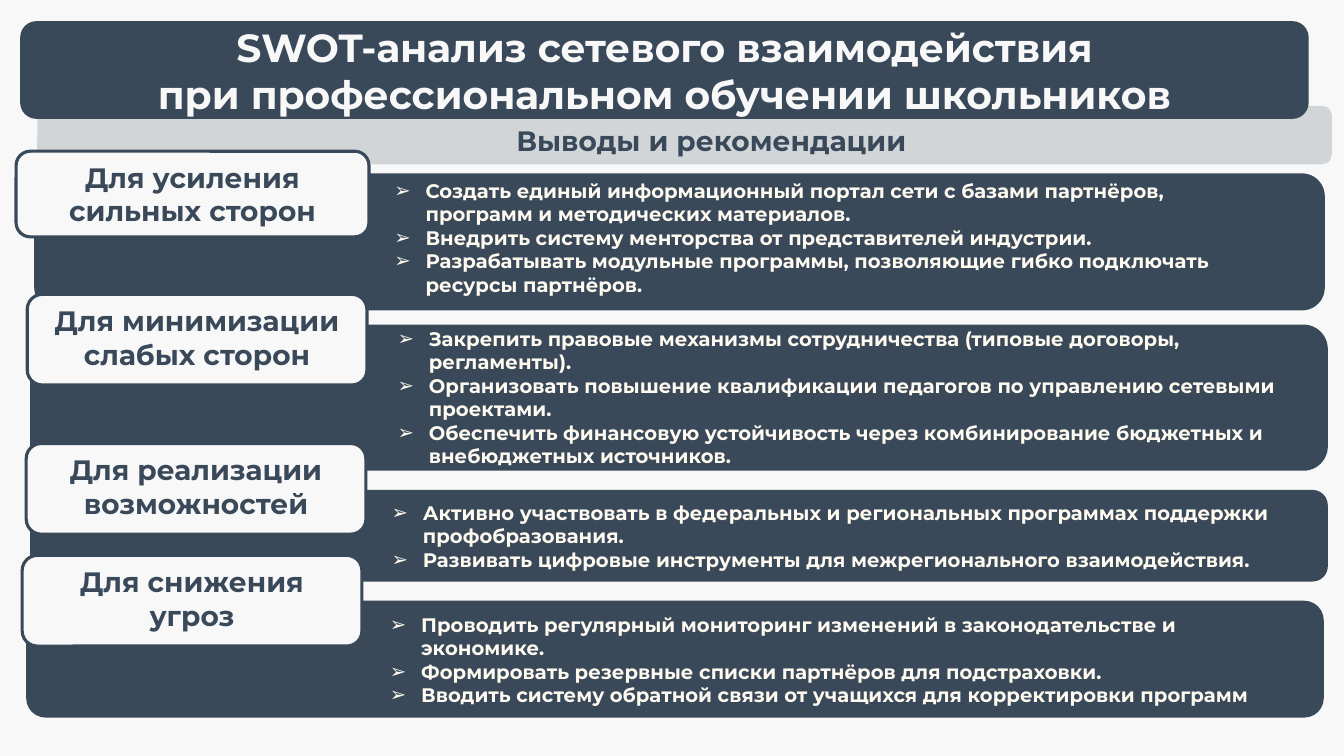
from dataclasses import dataclass

from lxml import etree
from pptx import Presentation
from pptx.dml.color import RGBColor
from pptx.enum.shapes import MSO_SHAPE
from pptx.enum.text import MSO_ANCHOR, MSO_AUTO_SIZE, PP_ALIGN
from pptx.oxml.ns import qn
from pptx.util import Inches, Pt

ROUNDED = MSO_SHAPE.ROUNDED_RECTANGLE
TOP, MIDDLE = MSO_ANCHOR.TOP, MSO_ANCHOR.MIDDLE
LEFT, CENTER = PP_ALIGN.LEFT, PP_ALIGN.CENTER
NO_AUTOFIT = MSO_AUTO_SIZE.NONE

FONT = "Montserrat"
NAVY, PAPER, CREAM = "394959", "F8F8F8", "FFFAF0"
COMPARISON_LAYOUT = 4  # a title and four body placeholders
BULLET_INDENT = 0.31
CORNER_INSET = 0.05  # share of the height kept clear of rounded corners


@dataclass(frozen=True)
class Box:
    left: float
    top: float
    width: float
    height: float

    def lengths(self) -> tuple:
        return tuple(Inches(v) for v in (self.left, self.top, self.width, self.height))


@dataclass(frozen=True)
class Section:
    label: list[str]
    label_box: Box
    panel: Box
    list_box: Box
    items: list[str]
    anchor: MSO_ANCHOR = TOP


TITLE_LINES = ["SWOT-анализ сетевого взаимодействия",
               "при профессиональном обучении школьников"]
TITLE_BOX = Box(0.2, 0.21, 12.78, 0.97)
SUBTITLE = "Выводы и рекомендации"
SUBTITLE_BOX = Box(0.37, 1.05, 12.84, 0.58)

SECTIONS = [
    Section(["Для усиления сильных сторон"],
            Box(0.16, 1.5, 3.5, 0.85), Box(0.34, 1.72, 12.8, 1.36),
            Box(3.74, 1.65, 9.05, 1.42),
            ["Создать единый информационный портал сети с базами партнёров, "
             "программ и методических материалов.",
             "Внедрить систему менторства от представителей индустрии.",
             "Разрабатывать модульные программы, позволяющие гибко подключать "
             "ресурсы партнёров."]),
    Section(["Для минимизации слабых сторон"],
            Box(0.27, 2.92, 3.37, 0.9), Box(0.3, 3.22, 12.87, 1.45),
            Box(3.76, 3.1, 9.42, 1.68),
            ["Закрепить правовые механизмы сотрудничества (типовые договоры, "
             "регламенты).",
             "Организовать повышение квалификации педагогов по управлению "
             "сетевыми проектами.",
             "Обеспечить финансовую устойчивость через комбинирование бюджетных "
             "и внебюджетных источников."],
            MIDDLE),
    Section(["Для реализации возможностей"],
            Box(0.26, 4.4, 3.37, 0.9), Box(0.3, 4.86, 12.87, 0.91),
            Box(3.74, 4.87, 9.14, 0.89),
            ["Активно участвовать в федеральных и региональных программах "
             "поддержки профобразования.",
             "Развивать цифровые инструменты для межрегионального "
             "взаимодействия."]),
    Section(["Для снижения", "угроз"],
            Box(0.22, 5.51, 3.37, 0.9), Box(0.26, 5.96, 12.87, 1.16),
            Box(3.71, 5.97, 9.14, 1.15),
            ["Проводить регулярный мониторинг изменений в законодательстве и "
             "экономике.",
             "Формировать резервные списки партнёров для подстраховки.",
             "Вводить систему обратной связи от учащихся для корректировки "
             "программ"]),
]


def color(hex_value: str) -> RGBColor:
    return RGBColor.from_string(hex_value)


def add_rounded(slide, box: Box, fill: str, line: str | None = None):
    shape = slide.shapes.add_shape(ROUNDED, *box.lengths())
    shape.shadow.inherit = False
    shape.fill.solid()
    shape.fill.fore_color.rgb = color(fill)
    if line:
        shape.line.color.rgb = color(line)
        shape.line.width = Pt(2.25)
    else:
        shape.line.fill.background()
    return shape


def set_opacity(shape, percent: int) -> None:
    fill_color = shape.element.spPr.find(qn("a:solidFill"))[0]
    etree.SubElement(fill_color, qn("a:alpha"), val=str(percent * 1000))


def write_text(shape, lines: list[str], size: float, hex_value: str,
               align: PP_ALIGN, anchor: MSO_ANCHOR) -> None:
    frame = shape.text_frame
    frame.word_wrap = True
    frame.auto_size = NO_AUTOFIT
    frame.vertical_anchor = anchor
    for index, line in enumerate(lines):
        paragraph = frame.add_paragraph() if index else frame.paragraphs[0]
        paragraph.alignment = align
        paragraph.line_spacing = 1.0
        paragraph.space_before = paragraph.space_after = Pt(0)
        run = paragraph.add_run()
        run.text = line
        run.font.name = FONT
        run.font.size = Pt(size)
        run.font.bold = True
        run.font.color.rgb = color(hex_value)


def add_bullets(shape) -> None:
    indent = Inches(BULLET_INDENT)
    for paragraph in shape.text_frame.paragraphs:
        properties = paragraph._p.get_or_add_pPr()
        properties.set("marL", str(indent))
        properties.set("indent", str(-indent))
        etree.SubElement(properties, qn("a:buFont"), typeface="Arial")
        etree.SubElement(properties, qn("a:buChar"), char="➢")


def place_in_front(placeholder, box: Box) -> None:
    placeholder.left, placeholder.top, placeholder.width, placeholder.height = box.lengths()
    placeholder.element.getparent().append(placeholder.element)


def add_list(placeholder, section: Section) -> None:
    box = section.list_box
    place_in_front(placeholder, box)
    write_text(placeholder, section.items, 14, CREAM, LEFT, section.anchor)
    add_bullets(placeholder)
    frame = placeholder.text_frame
    inset = CORNER_INSET * box.height
    frame.margin_left = frame.margin_right = Inches(0.1 + inset)
    frame.margin_top = frame.margin_bottom = Inches(0.05 + inset)


def main() -> None:
    presentation = Presentation()
    presentation.slide_width = Inches(13.33)
    presentation.slide_height = Inches(7.5)
    slide = presentation.slides.add_slide(presentation.slide_layouts[COMPARISON_LAYOUT])
    slide.background.fill.solid()
    slide.background.fill.fore_color.rgb = color(PAPER)
    title, *bodies = slide.placeholders

    # Subtitle bar, partly under the title banner
    subtitle = add_rounded(slide, SUBTITLE_BOX, NAVY)
    set_opacity(subtitle, 20)
    write_text(subtitle, [SUBTITLE], 20, NAVY, CENTER, TOP)
    subtitle.text_frame.margin_left = Inches(0.63)
    subtitle.text_frame.margin_top = Inches(0.15)

    # Title banner
    add_rounded(slide, TITLE_BOX, NAVY)
    place_in_front(title, TITLE_BOX)
    write_text(title, TITLE_LINES, 28, PAPER, CENTER, MIDDLE)

    # Panels with their lists
    for section, body in zip(SECTIONS, bodies):
        add_rounded(slide, section.panel, NAVY)
        add_list(body, section)

    # Labels over the panels
    for section in SECTIONS:
        label = add_rounded(slide, section.label_box, PAPER, NAVY)
        write_text(label, section.label, 20, NAVY, CENTER, TOP)

    presentation.save("out.pptx")


if __name__ == "__main__":
    main()
